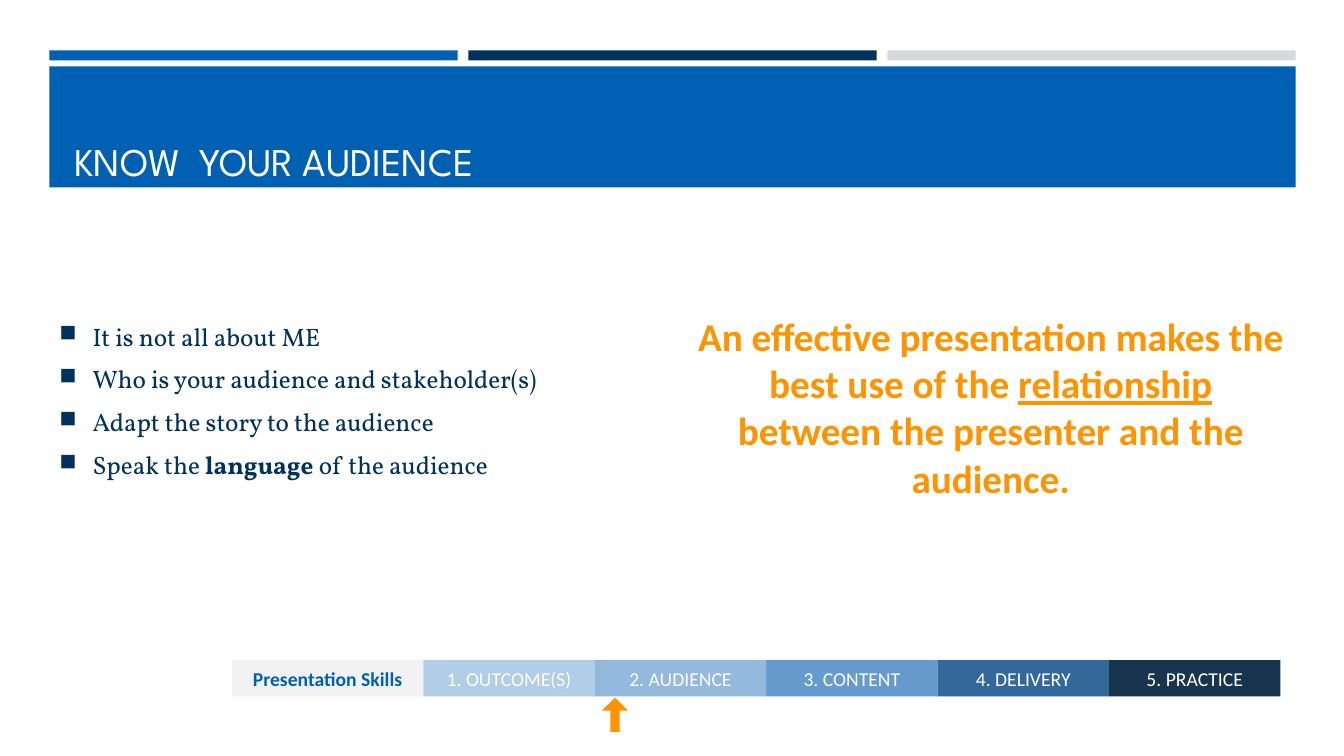
import pptx
import pptx.util
import pptx.dml.color
import pptx.enum.shapes
import pptx.enum.text
from lxml import etree

Inches, Pt = pptx.util.Inches, pptx.util.Pt
KIND = pptx.enum.shapes.MSO_SHAPE
ALIGN = pptx.enum.text.PP_ALIGN
ANCHOR = pptx.enum.text.MSO_ANCHOR

BLUE, NAVY, GREY, ORANGE, WHITE = "0060B1", "00325C", "D5D9DD", "FF9300", "FFFFFF"

TITLE = "KNOW  YOUR AUDIENCE"
# Each paragraph is a list of (words, style) runs.
POINTS = [
    [("It is not all about ME", "")],
    [("Who is your audience and stakeholder(s)", "")],
    [("Adapt the story to the audience", "")],
    [("Speak the ", ""), ("language", "bold"), (" of the audience", "")],
]
QUOTE = [
    ("An effective presentation makes the best use of the ", ""),
    ("relationship", "under"),
    (" between the presenter and the audience.", ""),
]
STEPS = [
    ("1. OUTCOME(S)", "B2CDE6"),
    ("2. AUDIENCE", "93B9DC"),
    ("3. CONTENT", "659BCD"),
    ("4. DELIVERY", "32689A"),
    ("5. PRACTICE", "19344D"),
]

deck = pptx.Presentation()
deck.slide_width, deck.slide_height = Inches(13.33), Inches(7.5)
slide = deck.slides.add_slide(deck.slide_layouts[6])


def rgb(code):
    return pptx.dml.color.RGBColor.from_string(code)


def add_block(x, y, w, h, fill, kind=KIND.RECTANGLE):
    shape = slide.shapes.add_shape(kind, Inches(x), Inches(y), Inches(w), Inches(h))
    shape.shadow.inherit = False
    shape.fill.solid()
    shape.fill.fore_color.rgb = rgb(fill)
    shape.line.fill.background()
    return shape


def add_box(x, y, w, h, anchor):
    box = slide.shapes.add_textbox(Inches(x), Inches(y), Inches(w), Inches(h))
    box.text_frame.word_wrap = True
    box.text_frame.vertical_anchor = anchor
    return box.text_frame


def add_runs(para, runs):
    for words, style in runs:
        run = para.add_run()
        run.text = words
        if style == "bold":
            run.font.bold = True
        elif style == "under":
            run.font.underline = True


def set_font(para, name, size, color, bold=None):
    para.font.name, para.font.size, para.font.bold = name, Pt(size), bold
    para.font.color.rgb = rgb(color)


def add_bullet(para):
    """Give the paragraph a hanging navy square."""
    props = para._p.get_or_add_pPr()
    props.set("marL", str(Inches(0.33)))
    props.set("indent", str(-Inches(0.33)))
    space = "{http://schemas.openxmlformats.org/drawingml/2006/main}"
    color = etree.SubElement(props, space + "buClr")
    etree.SubElement(color, space + "srgbClr", val=NAVY)
    etree.SubElement(props, space + "buSzPct", val="92000")
    etree.SubElement(props, space + "buChar", char="■")


# Header
for i, color in enumerate([BLUE, NAVY, GREY]):
    add_block(0.49 + i * 4.155, 0.5, 4.05, 0.1, color)
add_block(0.49, 0.66, 12.36, 1.2, BLUE)
para = add_box(0.64, 0.8, 12.06, 1.08, ANCHOR.BOTTOM).paragraphs[0]
para.text = TITLE
set_font(para, "League Spartan", 28, WHITE)

# Points on the left
frame = add_box(0.49, 2.03, 6.04, 3.84, ANCHOR.MIDDLE)
for i, runs in enumerate(POINTS):
    para = frame.add_paragraph() if i else frame.paragraphs[0]
    para.line_spacing, para.space_after = 1.14, Pt(6)
    add_bullet(para)
    add_runs(para, runs)
    set_font(para, "Vollkorn", 18, NAVY)

# Quote on the right
para = add_box(6.8, 2.06, 6.05, 3.95, ANCHOR.MIDDLE).paragraphs[0]
para.alignment = ALIGN.CENTER
add_runs(para, QUOTE)
set_font(para, "Calibri", 28, ORANGE, True)

# Step bar with its marker
tabs = [("Presentation Skills", "F2F2F2", 2.3, 1.9, BLUE, True)]
tabs += [(name, fill, 4.2 + i * 1.7, 1.7, WHITE, None)
         for i, (name, fill) in enumerate(STEPS)]
for name, fill, x, w, color, bold in tabs:
    frame = add_block(x, 6.55, w, 0.36, fill).text_frame
    frame.word_wrap = True
    frame.vertical_anchor = ANCHOR.MIDDLE
    para = frame.paragraphs[0]
    para.text = name
    para.alignment = ALIGN.CENTER
    set_font(para, "Calibri", 14, color, bold)
arrow = add_block(5.97, 6.92, 0.26, 0.34, ORANGE, KIND.UP_ARROW)
arrow.adjustments[0] = 0.36

deck.save("out.pptx")
